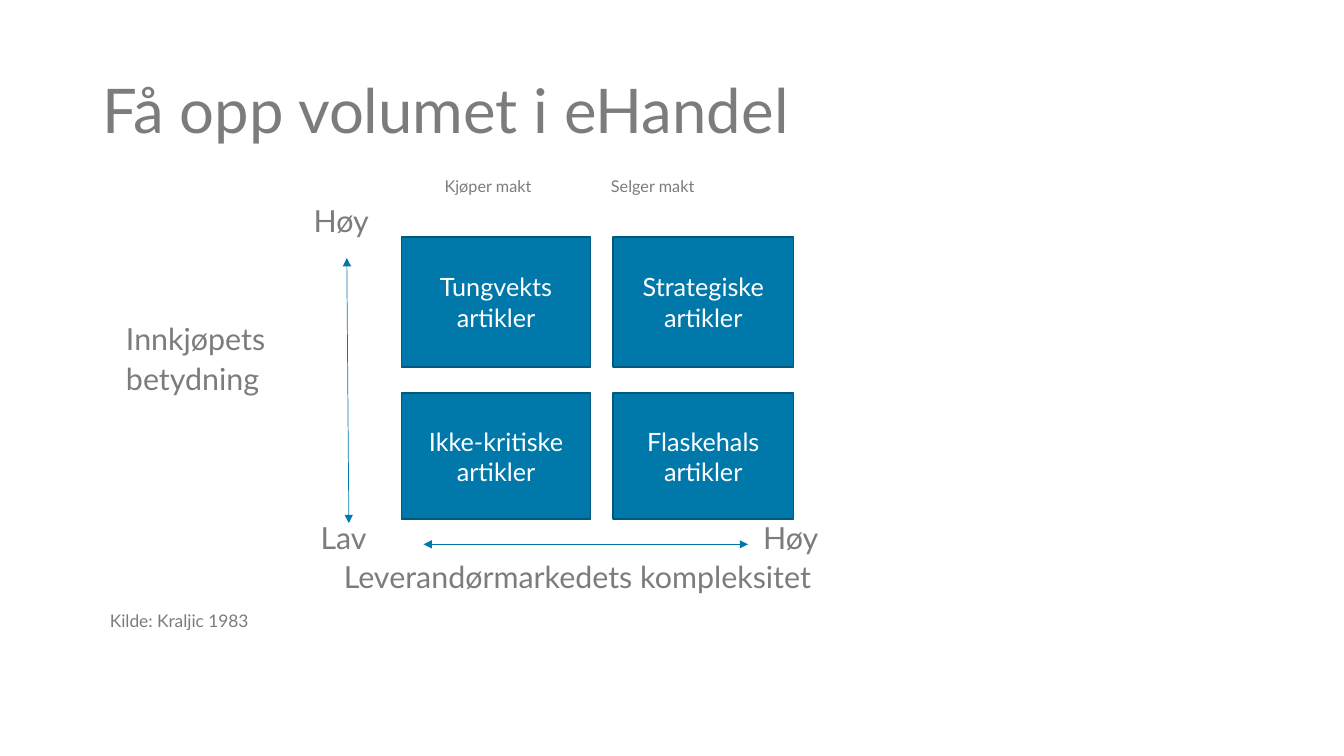
from lxml import etree
from pptx import Presentation
from pptx.dml.color import RGBColor
from pptx.enum.shapes import MSO_CONNECTOR, MSO_SHAPE
from pptx.enum.text import MSO_ANCHOR, PP_ALIGN
from pptx.oxml.ns import qn
from pptx.util import Inches, Pt

GREY = RGBColor(0x7C, 0x7C, 0x7C)
BLUE = RGBColor(0x00, 0x79, 0xAA)
DARK_BLUE = RGBColor(0x00, 0x5A, 0x7E)
WHITE = RGBColor(0xFF, 0xFF, 0xFF)
FONT = "Lato"
LABEL_SIZE = 21.7
SMALL_SIZE = 11.6
SOURCE_SIZE = 12.4
STRAIGHT = MSO_CONNECTOR.STRAIGHT
RECTANGLE = MSO_SHAPE.RECTANGLE
MIDDLE = MSO_ANCHOR.MIDDLE
LEFT = PP_ALIGN.LEFT
CENTER = PP_ALIGN.CENTER


def write_text(tf, text, size, color, align=LEFT):
    tf.text = text
    tf.word_wrap = True
    tf.vertical_anchor = MIDDLE
    for p in tf.paragraphs:
        p.alignment = align
        for r in p.runs:
            r.font.name = FONT
            r.font.size = Pt(size)
            r.font.color.rgb = color


def add_label(slide, text, x, y_mid, width, size=LABEL_SIZE, height=0.4):
    tb = slide.shapes.add_textbox(
        Inches(x), Inches(y_mid - height / 2), Inches(width), Inches(height))
    tf = tb.text_frame
    tf.margin_left = tf.margin_right = tf.margin_top = tf.margin_bottom = 0
    write_text(tf, text, size, GREY)
    for p in tf.paragraphs[1:]:
        p.space_before = Pt(2.5)


def add_double_arrow(slide, x1, y1, x2, y2):
    line = slide.shapes.add_connector(
        STRAIGHT, Inches(x1), Inches(y1), Inches(x2), Inches(y2))
    line.line.color.rgb = BLUE
    line.line.width = Pt(0.5)
    ln = line.line._get_or_add_ln()
    for end in ("a:headEnd", "a:tailEnd"):
        etree.SubElement(ln, qn(end), type="triangle")
    etree.SubElement(line._element.spPr, qn("a:effectLst"))


def add_title(slide, x, y, width, height):
    title = slide.shapes.title
    title.left, title.top = Inches(x), Inches(y)
    title.width, title.height = Inches(width), Inches(height)
    write_text(title.text_frame, "Få opp volumet i eHandel", 44, GREY)
    title.text_frame.paragraphs[0].line_spacing = 0.9


def add_matrix(slide, x, y, width, height):
    col_widths, row_heights = (1.88, 1.79), (1.29, 1.25)
    lefts = (x, x + width - col_widths[1])
    tops = (y, y + height - row_heights[1])
    names = (("Tungvekts\nartikler", "Strategiske artikler"),
             ("Ikke-kritiske artikler", "Flaskehals artikler"))
    for row, row_names in enumerate(names):
        for col, name in enumerate(row_names):
            sp = slide.shapes.add_shape(
                RECTANGLE, Inches(lefts[col]), Inches(tops[row]),
                Inches(col_widths[col]), Inches(row_heights[row]))
            sp.shadow.inherit = False
            sp.fill.solid()
            sp.fill.fore_color.rgb = BLUE
            sp.line.color.rgb = DARK_BLUE
            sp.line.width = Pt(1)
            write_text(sp.text_frame, name, 18, WHITE, CENTER)


def add_axes(slide, x, y, width, height):
    bottom = y + height
    right = x + width
    add_label(slide, "Kjøper makt", x + 0.43, y - 0.5, 1.2, SMALL_SIZE)
    add_label(slide, "Selger makt", x + 2.08, y - 0.5, 1.2, SMALL_SIZE)
    add_label(slide, "Høy", x - 0.87, y - 0.16, 0.8)
    add_label(slide, "Innkjøpets\nbetydning", x - 2.73, y + 1.21, 1.8, height=0.8)
    add_label(slide, "Lav", x - 0.8, bottom + 0.18, 0.8)
    add_label(slide, "Høy", right - 0.3, bottom + 0.18, 0.8)
    add_label(slide, "Leverandørmarkedets kompleksitet", x - 0.57, bottom + 0.57, 5.2)
    add_double_arrow(slide, x - 0.54, y + 0.21, x - 0.52, bottom + 0.04)
    add_double_arrow(slide, right - 0.45, bottom + 0.25, x + 0.22, bottom + 0.25)


def main():
    prs = Presentation()
    prs.slide_width, prs.slide_height = Inches(13.33), Inches(7.5)
    s = prs.slides.add_slide(prs.slide_layouts[5])
    matrix = (3.98, 2.35, 3.89, 2.8)
    add_title(s, 0.92, 0.4, 11.5, 1.45)
    add_axes(s, *matrix)
    add_matrix(s, *matrix)
    add_label(s, "Kilde: Kraljic 1983", 1.09, 6.16, 2, SOURCE_SIZE)
    prs.save("out.pptx")


if __name__ == "__main__":
    main()
